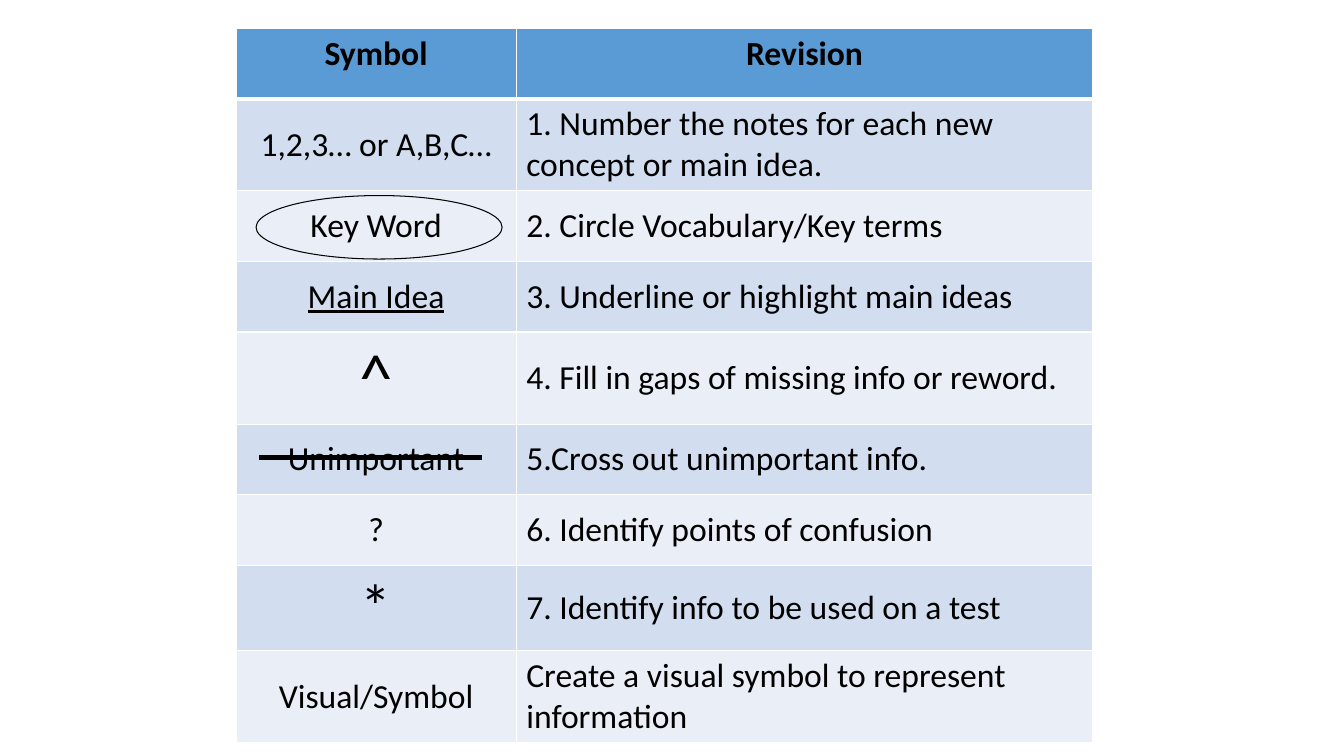
from lxml import etree
from pptx import Presentation
from pptx.dml.color import RGBColor
from pptx.enum.shapes import MSO_CONNECTOR, MSO_SHAPE
from pptx.enum.text import MSO_ANCHOR, PP_ALIGN
from pptx.oxml.ns import qn
from pptx.util import Inches, Pt

BLACK = RGBColor(0x00, 0x00, 0x00)
WHITE = RGBColor(0xFF, 0xFF, 0xFF)
HEADER_BLUE = RGBColor(0x5B, 0x9B, 0xD5)
BAND_FILLS = [RGBColor(0xEA, 0xEF, 0xF7), RGBColor(0xD2, 0xDE, 0xEF)]
LEFT, CENTER = PP_ALIGN.LEFT, PP_ALIGN.CENTER
TOP, MIDDLE = MSO_ANCHOR.TOP, MSO_ANCHOR.MIDDLE
OVAL = MSO_SHAPE.OVAL
STRAIGHT = MSO_CONNECTOR.STRAIGHT

FONT = "Calibri"
TEXT_SIZE = 24
SYMBOL_SIZES = {"^": 48, "*": 44}
UNDERLINED = "Main Idea"
COLUMN_WIDTHS = [2.78, 5.72]
ROWS = [
    (0.7, "Symbol", "Revision"),
    (0.9, "1,2,3… or A,B,C…", "1. Number the notes for each new concept or main idea."),
    (0.7, "Key Word", "2. Circle Vocabulary/Key terms"),
    (0.7, "Main Idea", "3. Underline or highlight main ideas"),
    (0.9, "^", "4. Fill in gaps of missing info or reword."),
    (0.7, "Unimportant", "5.Cross out unimportant info."),
    (0.7, "?", "6. Identify points of confusion"),
    (0.83, "*", "7. Identify info to be used on a test"),
    (0.9, "Visual/Symbol", "Create a visual symbol to represent information"),
]


def set_borders(cell, top, bottom):
    properties = cell._tc.get_or_add_tcPr()
    widths = {"a:lnL": 1, "a:lnR": 1, "a:lnT": top, "a:lnB": bottom}
    for index, (tag, width) in enumerate(widths.items()):
        line = etree.Element(qn(tag), w=str(Pt(width)))
        fill = etree.SubElement(line, qn("a:solidFill"))
        etree.SubElement(fill, qn("a:srgbClr"), val=str(WHITE))
        properties.insert(index, line)


def fill_cell(cell, text, row, column):
    header = row == 0
    cell.fill.solid()
    cell.fill.fore_color.rgb = HEADER_BLUE if header else BAND_FILLS[row % 2]
    cell.vertical_anchor = TOP if header else MIDDLE
    set_borders(cell, 3 if row == 1 else 1, 3 if header else 1)
    paragraph = cell.text_frame.paragraphs[0]
    paragraph.alignment = CENTER if header or column == 0 else LEFT
    run = paragraph.add_run()
    run.text = text
    run.font.name = FONT
    run.font.size = Pt(SYMBOL_SIZES.get(text, TEXT_SIZE))
    run.font.bold = header
    run.font.underline = text == UNDERLINED
    run.font.color.rgb = BLACK


def add_revision_table(slide, left, top):
    width = sum(COLUMN_WIDTHS)
    height = sum(row[0] for row in ROWS)
    table = slide.shapes.add_table(
        len(ROWS), len(COLUMN_WIDTHS),
        Inches(left), Inches(top), Inches(width), Inches(height)).table
    for column, column_width in zip(table.columns, COLUMN_WIDTHS):
        column.width = Inches(column_width)
    for row, (row_height, *texts) in enumerate(ROWS):
        table.rows[row].height = Inches(row_height)
        for column, text in enumerate(texts):
            fill_cell(table.cell(row, column), text, row, column)


def add_symbol_marks(slide, left, top):
    circle = slide.shapes.add_shape(
        OVAL, Inches(left + 0.2), Inches(top + 1.66), Inches(2.44), Inches(0.63))
    circle.shadow.inherit = False
    circle.fill.background()
    circle.line.color.rgb = BLACK
    circle.line.width = Pt(0.75)

    strike_y = Inches(top + 4.26)
    strike = slide.shapes.add_connector(
        STRAIGHT, Inches(left + 0.23), strike_y, Inches(left + 2.44), strike_y)
    strike.line.color.rgb = BLACK
    strike.line.width = Pt(3.75)
    etree.SubElement(strike._element.spPr, qn("a:effectLst"))


def main():
    presentation = Presentation()
    presentation.slide_width = Inches(13.33)
    presentation.slide_height = Inches(7.5)
    slide = presentation.slides.add_slide(presentation.slide_layouts[6])
    table_left, table_top = 2.34, 0.28
    add_revision_table(slide, table_left, table_top)
    add_symbol_marks(slide, table_left, table_top)
    presentation.save("out.pptx")


if __name__ == "__main__":
    main()
